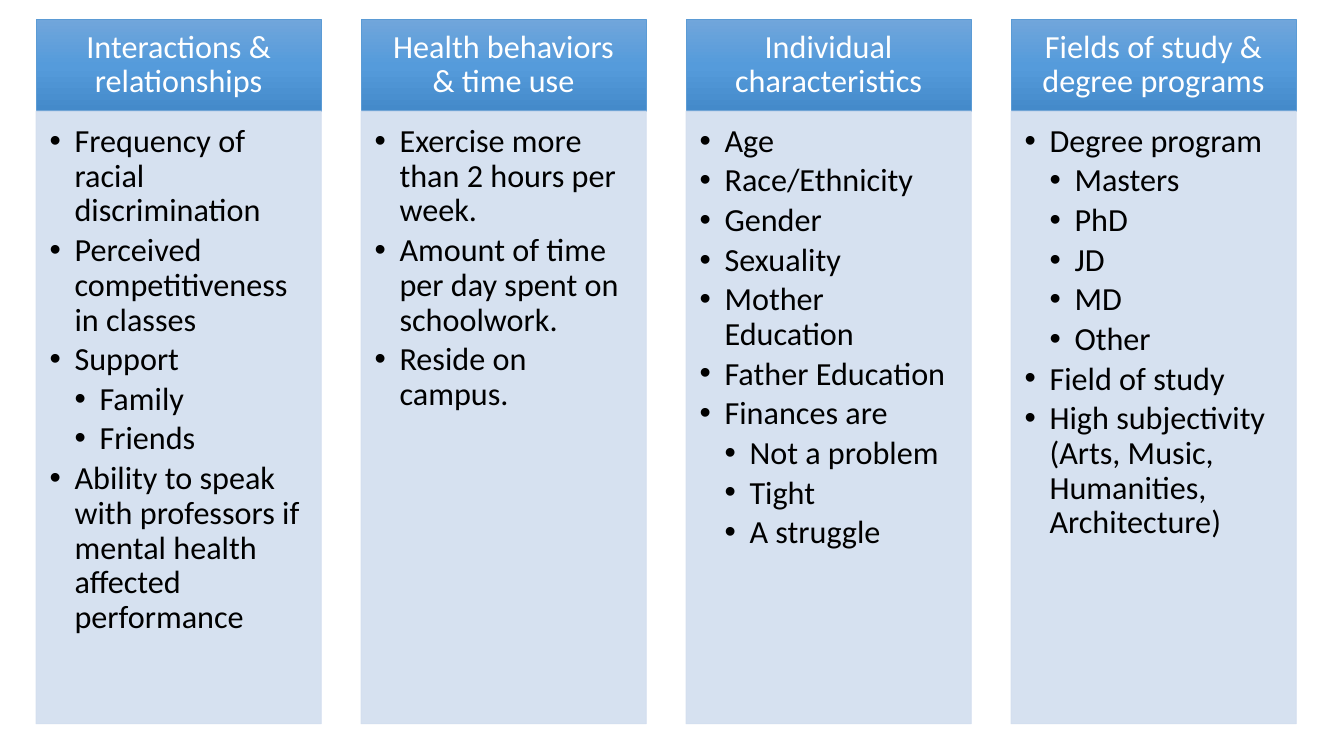
import copy
import dataclasses
import typing

import pptx
import pptx.dml.color
import pptx.enum.shapes
import pptx.enum.text
import pptx.oxml.ns
import pptx.shapes.autoshape
import pptx.util
from lxml import etree

Cm = pptx.util.Cm
Pt = pptx.util.Pt
qn = pptx.oxml.ns.qn
Align = pptx.enum.text.PP_ALIGN
Anchor = pptx.enum.text.MSO_ANCHOR
Shape = pptx.shapes.autoshape.Shape

HEX = {
    "light": "71A6DB",
    "mid": "559BDB",
    "dark": "448ACA",
    "edge": "5B9BD5",
    "pale": "D2DEEF",
    "white": "FFFFFF",
    "black": "000000",
}

LEFT, PITCH, WIDTH = 0.91, 8.19, 7.19
HEAD_TOP, HEAD_TALL = 0.48, 2.32
BODY_TOP, BODY_TALL = 2.8, 15.44
INDENT = 0.63
OPAQUE = "90000"

HEAD_FRAME = {
    "word_wrap": True,
    "vertical_anchor": Anchor.MIDDLE,
    "margin_left": Cm(0.45),
    "margin_right": Cm(0.45),
    "margin_top": Cm(0.26),
    "margin_bottom": Cm(0.26),
}
BODY_FRAME = HEAD_FRAME | {
    "vertical_anchor": Anchor.TOP,
    "margin_left": Cm(0.34),
    "margin_top": Cm(0.34),
    "margin_bottom": Cm(0.51),
}
HEAD_PARA = {"alignment": Align.CENTER, "line_spacing": 0.9}
BODY_PARA = {"alignment": Align.LEFT, "line_spacing": 0.9, "space_after": Pt(3.45)}
FONT = {"name": "Calibri", "size": Pt(23)}


@dataclasses.dataclass
class Item:
    text: str
    level: int = 1


@dataclasses.dataclass
class Column:
    title: str
    items: list[Item]


COLUMNS = [
    Column("Interactions & relationships", [
        Item("Frequency of racial discrimination"),
        Item("Perceived competitiveness in classes"),
        Item("Support"),
        Item("Family", 2),
        Item("Friends", 2),
        Item("Ability to speak with professors if mental health affected performance"),
    ]),
    Column("Health behaviors & time use", [
        Item("Exercise more than 2 hours per week."),
        Item("Amount of time per day spent on schoolwork."),
        Item("Reside on campus."),
    ]),
    Column("Individual characteristics", [
        Item("Age"),
        Item("Race/Ethnicity"),
        Item("Gender"),
        Item("Sexuality"),
        Item("Mother Education"),
        Item("Father Education"),
        Item("Finances are"),
        Item("Not a problem", 2),
        Item("Tight", 2),
        Item("A struggle", 2),
    ]),
    Column("Fields of study & degree programs", [
        Item("Degree program"),
        Item("Masters", 2),
        Item("PhD", 2),
        Item("JD", 2),
        Item("MD", 2),
        Item("Other", 2),
        Item("Field of study"),
        Item("High subjectivity (Arts, Music, Humanities, Architecture)"),
    ]),
]


def color(name: str) -> pptx.dml.color.RGBColor:
    return pptx.dml.color.RGBColor.from_string(HEX[name])


def format_with(target: typing.Any, values: dict[str, typing.Any]) -> None:
    for name, value in values.items():
        setattr(target, name, value)


def add_box(slide: typing.Any, left: float, top: float, tall: float,
            edge: str, frame: dict[str, typing.Any]) -> Shape:
    kind = pptx.enum.shapes.MSO_SHAPE.RECTANGLE
    box = slide.shapes.add_shape(kind, Cm(left), Cm(top), Cm(WIDTH), Cm(tall))
    box.shadow.inherit = False
    box.line.color.rgb = color(edge)
    box.line.width = Pt(0.5)
    format_with(box.text_frame, frame)
    return box


def write(para: typing.Any, text: str, ink: str, values: dict[str, typing.Any]) -> None:
    format_with(para, values)
    run = para.add_run()
    run.text = text
    format_with(run.font, FONT)
    run.font.color.rgb = color(ink)


def shade(box: Shape) -> None:
    """Fill the box with a three-stop gradient from top to bottom."""
    box.fill.gradient()
    box.fill.gradient_angle = 270
    stops = box.element.spPr.find(qn("a:gradFill")).find(qn("a:gsLst"))
    stops.insert(1, copy.deepcopy(stops[0]))
    for stop, name, place in zip(box.fill.gradient_stops, ("light", "mid", "dark"), (0, 0.5, 1)):
        stop.color.rgb = color(name)
        stop.position = place


def add_bullet(para: typing.Any, level: int) -> None:
    props = para._p.get_or_add_pPr()
    props.set("marL", str(Cm(INDENT * level)))
    props.set("indent", str(-Cm(INDENT)))
    etree.SubElement(props, qn("a:buFont"), typeface="Arial")
    etree.SubElement(props, qn("a:buChar"), char="•")


def draw_head(slide: typing.Any, left: float, title: str) -> None:
    box = add_box(slide, left, HEAD_TOP, HEAD_TALL, "edge", HEAD_FRAME)
    shade(box)
    write(box.text_frame.paragraphs[0], title, "white", HEAD_PARA)


def draw_body(slide: typing.Any, left: float, items: list[Item]) -> None:
    box = add_box(slide, left, BODY_TOP, BODY_TALL, "pale", BODY_FRAME)
    box.fill.solid()
    box.fill.fore_color.rgb = color("pale")
    for tint in box.element.spPr.iter(qn("a:srgbClr")):
        etree.SubElement(tint, qn("a:alpha"), val=OPAQUE)
    frame = box.text_frame
    for index, item in enumerate(items):
        para = frame.add_paragraph() if index else frame.paragraphs[0]
        add_bullet(para, item.level)
        write(para, item.text, "black", BODY_PARA | {"level": item.level})


def main() -> None:
    deck = pptx.Presentation()
    deck.slide_width = Cm(33.87)
    deck.slide_height = Cm(19.05)
    slide = deck.slides.add_slide(deck.slide_layouts.get_by_name("Blank"))
    for index, column in enumerate(COLUMNS):
        left = LEFT + index * PITCH
        draw_head(slide, left, column.title)
        draw_body(slide, left, column.items)
    deck.save("out.pptx")


if __name__ == "__main__":
    main()
